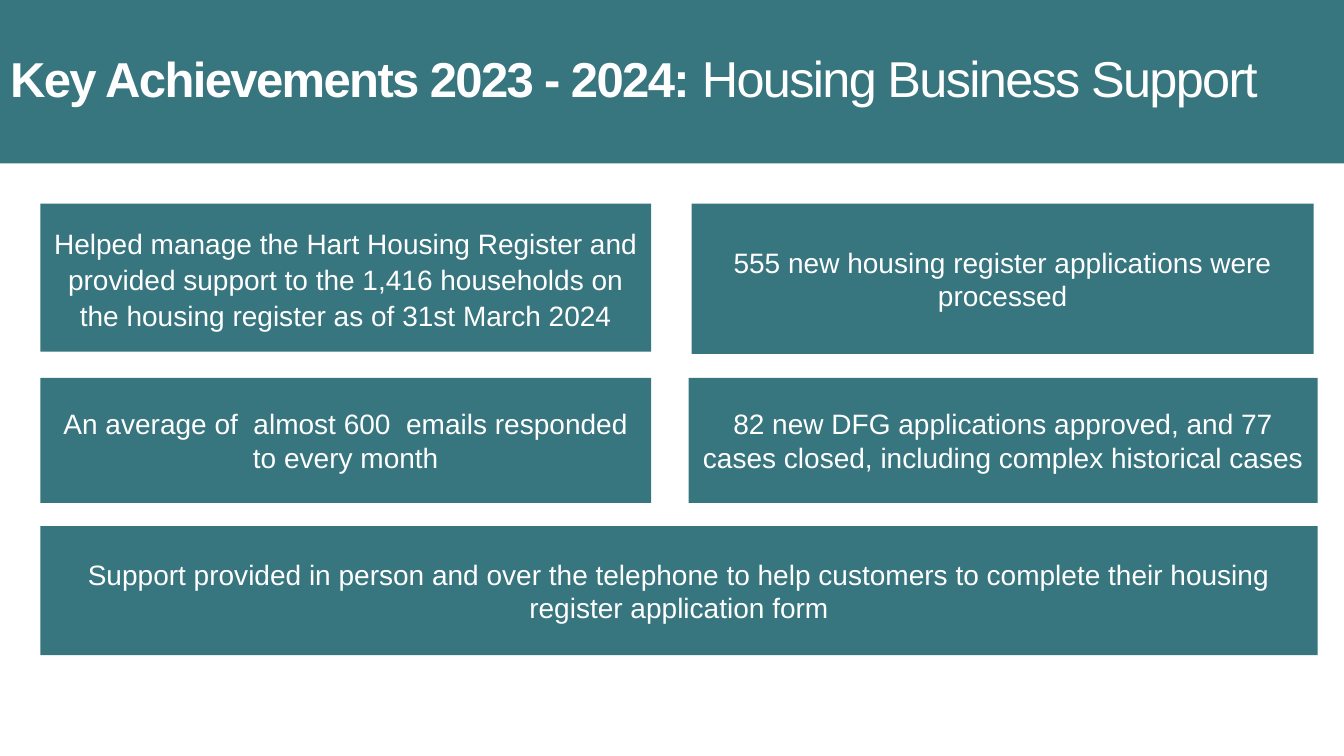
from pptx import Presentation
from pptx.dml.color import RGBColor
from pptx.enum.shapes import MSO_SHAPE as SHAPE
from pptx.enum.text import MSO_ANCHOR as ANCHOR, MSO_AUTO_SIZE as AUTOSIZE, PP_ALIGN as ALIGN
from pptx.util import Inches, Pt

TEAL, WHITE = "37757F", "FFFFFF"
LEFT, ROW_1, ROW_2, ROW_3 = 0.4, 2.02, 3.75, 5.22

# Box (left, top, width, height), text, paragraph format
ACHIEVEMENTS = [
    ((LEFT, ROW_1, 6.06, 1.47),
     "Helped manage the Hart Housing Register and provided support to the "
     "1,416 households on the housing register as of 31st March 2024",
     {"line_spacing": 1.07, "space_after": Pt(8)}),
    ((6.86, ROW_1, 6.17, 1.49),
     "555 new housing register applications were processed", {}),
    ((LEFT, ROW_2, 6.06, 1.24),
     "An average of  almost 600  emails responded to every month", {}),
    ((6.83, ROW_2, 6.24, 1.24),
     "82 new DFG applications approved, and 77 cases closed, "
     "including complex historical cases", {}),
    ((LEFT, ROW_3, 12.67, 1.28),
     "Support provided in person and over the telephone to help customers "
     "to complete their housing register application form", {}),
]


def color(value):
    return RGBColor.from_string(value)


def set_format(target, values):
    for name, value in values.items():
        setattr(target, name, value)


def fill_teal(sp):
    sp.fill.solid()
    sp.fill.fore_color.rgb = color(TEAL)
    set_format(sp.text_frame, {"word_wrap": True, "auto_size": AUTOSIZE.NONE,
                               "vertical_anchor": ANCHOR.MIDDLE})


def add_run(p, text, size, bold=False):
    r = p.add_run()
    r.text = text
    set_format(r.font, {"name": "Arial", "size": Pt(size), "bold": bold})
    r.font.color.rgb = color(WHITE)
    return r


def add_title(slide, box):
    sp = slide.shapes.title
    set_format(sp, dict(zip(("left", "top", "width", "height"), map(Inches, box))))
    fill_teal(sp)
    p = sp.text_frame.paragraphs[0]
    set_format(p, {"alignment": ALIGN.LEFT, "line_spacing": 0.85})
    for text, size, bold in (("Key Achievements 2023 - 2024: ", 35, True),
                             ("Housing Business Support", 36, False)):
        r = add_run(p, text, size, bold)
        # Tighter letter spacing, in hundredths of a point
        r.font._element.set("spc", "-120")


def add_achievement(slide, box, text, paragraph_format):
    sp = slide.shapes.add_shape(SHAPE.RECTANGLE, *map(Inches, box))
    sp.shadow.inherit = False
    sp.line.fill.background()
    fill_teal(sp)
    p = sp.text_frame.paragraphs[0]
    set_format(p, {"alignment": ALIGN.CENTER, **paragraph_format})
    add_run(p, text, 20)


def main():
    prs = Presentation()
    set_format(prs, {"slide_width": Inches(13.33), "slide_height": Inches(7.5)})
    slide = prs.slides.add_slide(prs.slide_layouts.get_by_name("Title Only"))

    # Title band
    add_title(slide, (0, 0, 13.33, 1.62))

    # Achievement boxes
    for box, text, paragraph_format in ACHIEVEMENTS:
        add_achievement(slide, box, text, paragraph_format)

    prs.save("out.pptx")


if __name__ == "__main__":
    main()
